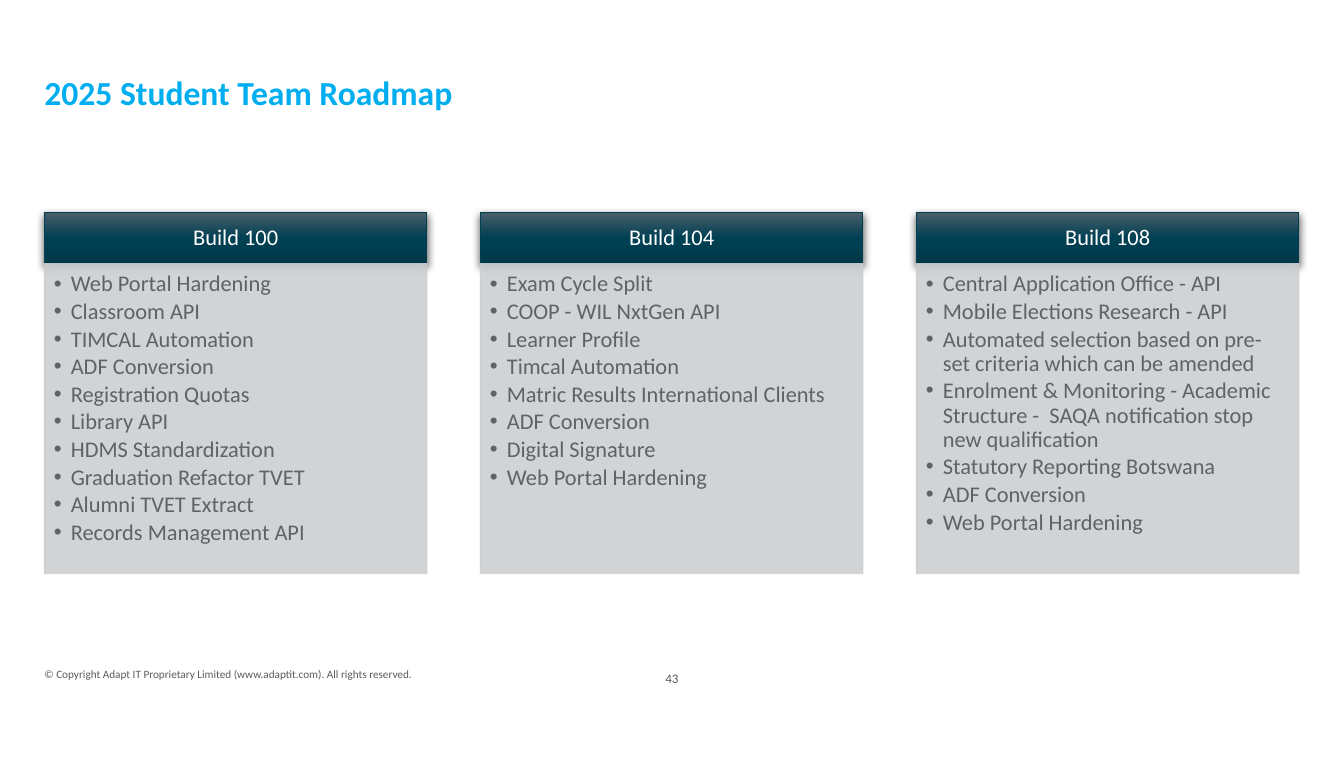
from lxml import etree
from pptx import Presentation
from pptx import util as u
from pptx.dml import color
from pptx.enum import shapes, text
from pptx.oxml import ns, parse_xml

FONT = "Calibri"
GREY, DARK, PANEL = "585C5E", "004053", "CCCFD1"
LEFT, COLUMN_WIDTH, COLUMN_STEP = 0.84, 7.23, 8.24
HEADER_TOP, HEADER_HEIGHT, BODY_HEIGHT = 4.01, 0.97, 5.86

BUILDS = {
    "Build 100": [
        "Web Portal Hardening", "Classroom API", "TIMCAL Automation",
        "ADF Conversion", "Registration Quotas", "Library API",
        "HDMS Standardization", "Graduation Refactor TVET",
        "Alumni TVET Extract", "Records Management API",
    ],
    "Build 104": [
        "Exam Cycle Split", "COOP - WIL NxtGen API", "Learner Profile",
        "Timcal Automation", "Matric Results International Clients",
        "ADF Conversion", "Digital Signature", "Web Portal Hardening",
    ],
    "Build 108": [
        "Central Application Office - API", "Mobile Elections Research - API",
        "Automated selection based on pre-set criteria which can be amended",
        "Enrolment & Monitoring - Academic Structure -  SAQA notification stop new qualification",
        "Statutory Reporting Botswana", "ADF Conversion", "Web Portal Hardening",
    ],
}


def rgb(value):
    return color.RGBColor.from_string(value)


def cm(*lengths):
    return [u.Cm(length) for length in lengths]


def add_bullet(paragraph):
    properties = paragraph._p.get_or_add_pPr()
    properties.set("marL", str(u.Cm(0.32)))
    properties.set("indent", str(-u.Cm(0.32)))
    etree.SubElement(properties, ns.qn("a:buFont"), typeface="Arial")
    etree.SubElement(properties, ns.qn("a:buChar"), char="•")


def write(shape, lines, size, ink, bold=False, align=text.PP_ALIGN.LEFT,
          anchor=text.MSO_ANCHOR.MIDDLE, insets=(0, 0, 0, 0),
          spacing=None, after=0, bullets=False):
    """Fill a shape with one paragraph for each line."""
    frame = shape.text_frame
    frame.word_wrap = True
    frame.auto_size = text.MSO_AUTO_SIZE.NONE
    frame.vertical_anchor = anchor
    (frame.margin_left, frame.margin_top,
     frame.margin_right, frame.margin_bottom) = cm(*insets)
    for index, line in enumerate(lines):
        paragraph = frame.paragraphs[0] if index == 0 else frame.add_paragraph()
        if bullets:
            paragraph.level = 1
            add_bullet(paragraph)
        paragraph.alignment = align
        paragraph.line_spacing = spacing
        paragraph.space_before = u.Pt(0)
        paragraph.space_after = u.Pt(after)
        run = paragraph.add_run()
        run.text = line
        run.font.name, run.font.size, run.font.bold = FONT, u.Pt(size), bold
        run.font.color.rgb = rgb(ink)


def add_title(slide, wording):
    title = slide.shapes.title
    title.left, title.top, title.width, title.height = cm(LEFT, 1.04, 23.7, 1.35)
    write(title, [wording], 18, "00AEEF", bold=True, spacing=u.Pt(22.6))


def add_label(slide, box, wording, size, **style):
    write(slide.shapes.add_textbox(*cm(*box)), [wording], size, GREY, **style)


def add_box(slide, left, top, height, fill, line):
    shape = slide.shapes.add_shape(
        shapes.MSO_SHAPE.RECTANGLE, *cm(left, top, COLUMN_WIDTH, height))
    shape.shadow.inherit = False
    shape.fill.solid()
    shape.fill.fore_color.rgb = rgb(fill)
    shape.line.color.rgb = rgb(line)
    shape.line.width = u.Pt(0.5)
    return shape


def set_gradient(shape, stops):
    """Replace the solid fill with a top-to-bottom gradient."""
    stop_xml = "".join(
        f'<a:gs pos="{position * 1000}"><a:srgbClr val="{value}"/></a:gs>'
        for position, value in stops)
    solid = shape._element.spPr.find(ns.qn("a:solidFill"))
    solid.getparent().replace(solid, parse_xml(
        f'<a:gradFill {ns.nsdecls("a")} rotWithShape="1"><a:gsLst>{stop_xml}</a:gsLst>'
        '<a:lin ang="5400000" scaled="0"/></a:gradFill>'))


def set_shadow(shape):
    effects = shape._element.spPr.find(ns.qn("a:effectLst"))
    effects.append(parse_xml(
        f'<a:outerShdw {ns.nsdecls("a")} blurRad="{u.Pt(4.5)}" dist="{u.Pt(1.5)}"'
        ' dir="5400000" algn="ctr" rotWithShape="0">'
        '<a:srgbClr val="000000"><a:alpha val="63000"/></a:srgbClr></a:outerShdw>'))


def set_opacity(shape, percent):
    """Apply the opacity to both the fill and the line."""
    for value in shape._element.spPr.iter(ns.qn("a:srgbClr")):
        etree.SubElement(value, ns.qn("a:alpha"), val=str(percent * 1000))


def add_column(slide, left, heading, items):
    # Header bar
    header = add_box(slide, left, HEADER_TOP, HEADER_HEIGHT, DARK, DARK)
    set_gradient(header, [(0, "4B5E6B"), (50, DARK), (100, "00394A")])
    set_shadow(header)
    write(header, [heading], 12, "FFFFFF", align=text.PP_ALIGN.CENTER,
          insets=(0.23, 0.13, 0.23, 0.13), spacing=0.9)
    # Panel with the planned items
    panel = add_box(slide, left, HEADER_TOP + HEADER_HEIGHT, BODY_HEIGHT, PANEL, PANEL)
    set_opacity(panel, 90)
    write(panel, items, 12, "5F6369", anchor=text.MSO_ANCHOR.TOP,
          insets=(0.18, 0.17, 0.23, 0.25), spacing=0.9, after=1.8, bullets=True)


def main():
    presentation = Presentation()
    presentation.slide_width, presentation.slide_height = cm(25.4, 14.3)
    slide = presentation.slides.add_slide(presentation.slide_layouts[5])

    # Footer
    add_label(slide, (LEFT, 12.15, 8.76, 1.17),
              "© Copyright Adapt IT Proprietary Limited (www.adaptit.com). All rights reserved.", 6)
    add_label(slide, (10.95, 12.15, 3.5, 1.32), "43", 7, align=text.PP_ALIGN.CENTER)

    # Title and the three builds
    add_title(slide, "2025 Student Team Roadmap")
    for index, (heading, items) in enumerate(BUILDS.items()):
        add_column(slide, LEFT + index * COLUMN_STEP, heading, items)

    presentation.save("out.pptx")


if __name__ == "__main__":
    main()
